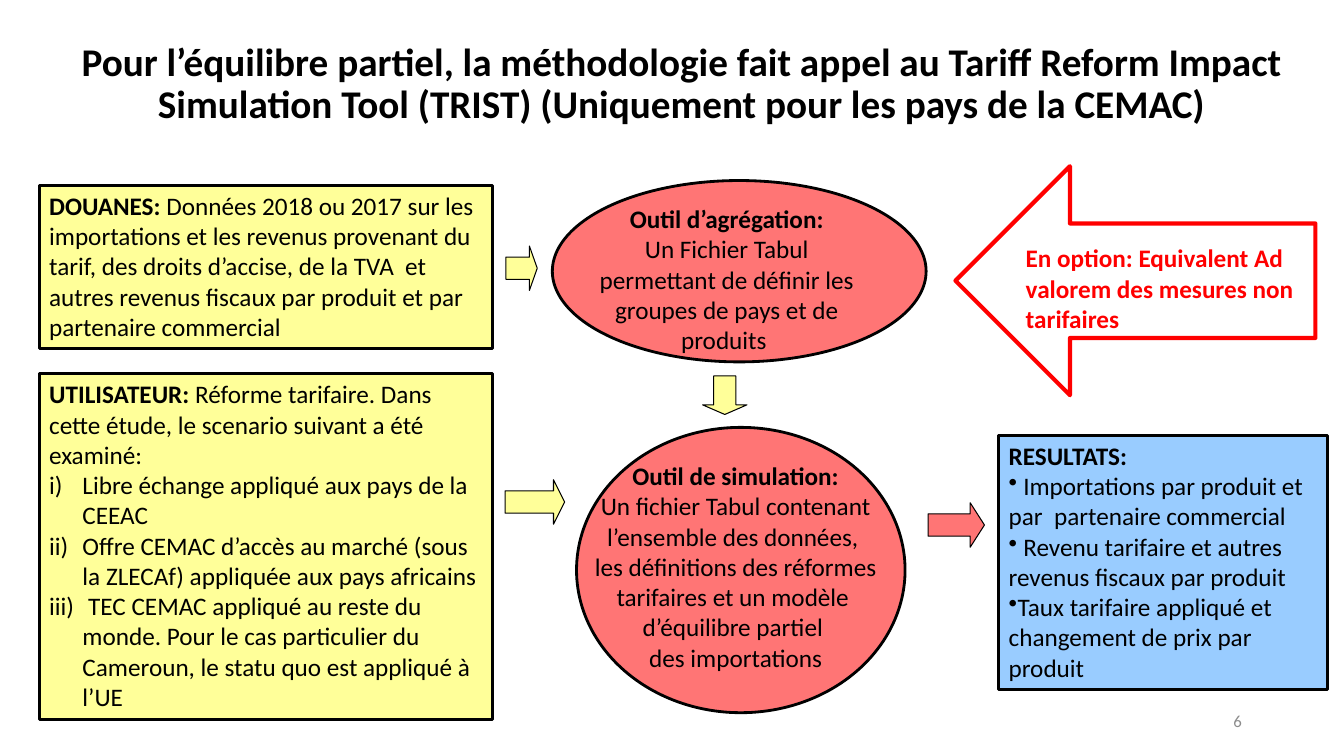
from dataclasses import dataclass

from lxml import etree
from pptx import Presentation
from pptx.dml.color import RGBColor
from pptx.enum.shapes import MSO_SHAPE
from pptx.enum.text import MSO_ANCHOR, PP_ALIGN
from pptx.oxml.ns import qn
from pptx.util import Cm, Pt

RECT, OVAL = MSO_SHAPE.RECTANGLE, MSO_SHAPE.OVAL
RIGHT_ARROW, LEFT_ARROW = MSO_SHAPE.RIGHT_ARROW, MSO_SHAPE.LEFT_ARROW
LEFT, CENTER, RIGHT = PP_ALIGN.LEFT, PP_ALIGN.CENTER, PP_ALIGN.RIGHT
TOP, MIDDLE = MSO_ANCHOR.TOP, MSO_ANCHOR.MIDDLE


@dataclass(frozen=True)
class Theme:
    font: str = "Calibri"
    title: int = 28
    body: int = 18
    small: int = 12
    black: str = "000000"
    red: str = "FF0000"
    grey: str = "8C8C8C"
    tool: str = "FF7575"
    source: str = "FFFF99"
    result: str = "99CCFF"


THEME = Theme()
ROMAN = ("a:buAutoNum", "type", "romanLcParenR", Cm(0.84))
DOT = ("a:buChar", "char", "•", 0)

prs = Presentation()
prs.slide_width, prs.slide_height = Cm(33.87), Cm(19.05)
slide = prs.slides.add_slide(prs.slide_layouts[6])


def add_block(box, kind, fill=None, line=THEME.black, weight=2.0):
    """Add a preset shape; box is left, top, width, height in centimetres."""
    block = slide.shapes.add_shape(kind, *map(Cm, box))
    block.shadow.inherit = False
    if fill:
        block.fill.solid()
        block.fill.fore_color.rgb = RGBColor.from_string(fill)
    else:
        block.fill.background()
    block.line.color.rgb = RGBColor.from_string(line)
    block.line.width = Pt(weight)
    return block


def write(holder, paragraphs, size=THEME.body, color=THEME.black, align=LEFT,
          anchor=TOP, spacing=1.0, bullet=None):
    """Write (bold, plain) pairs as paragraphs; bullet marks all but the first.

    The holder is a shape, or a box in centimetres for a new text box.
    """
    if isinstance(holder, tuple):
        holder = slide.shapes.add_textbox(*map(Cm, holder))
    frame = holder.text_frame
    frame.word_wrap = True
    frame.vertical_anchor = anchor
    for index, parts in enumerate(paragraphs):
        paragraph = frame.add_paragraph() if index else frame.paragraphs[0]
        paragraph.alignment = align
        paragraph.line_spacing = spacing
        if bullet and index:
            tag, attribute, value, indent = bullet
            properties = paragraph._p.get_or_add_pPr()
            properties.set("marL", str(indent))
            properties.set("indent", str(-indent))
            etree.SubElement(properties, qn(tag)).set(attribute, value)
        for text, bold in zip(parts, (True, False)):
            if text:
                run = paragraph.add_run()
                run.text = text
                run.font.name = THEME.font
                run.font.size = Pt(size)
                run.font.bold = bold
                run.font.color.rgb = RGBColor.from_string(color)


write((0.48, 0.46, 33.38, 3.35),
      [("Pour l’équilibre partiel, la méthodologie fait appel au Tariff Reform Impact "
        "Simulation Tool (TRIST) (Uniquement pour les pays de la CEMAC)", "")],
      size=THEME.title, align=CENTER, anchor=MIDDLE, spacing=0.9)

# Data sources and results
customs = add_block((0.99, 4.67, 11.43, 4.11), RECT, THEME.source)
write(customs, [
    ("DOUANES:", " Données 2018 ou 2017 sur les importations et les revenus provenant "
     "du tarif, des droits d’accise, de la TVA  et autres revenus fiscaux par produit "
     "et par partenaire commercial")])

user = add_block((0.99, 9.42, 11.43, 8.71), RECT, THEME.source)
write(user, [
    ("UTILISATEUR:", " Réforme tarifaire. Dans cette étude, le scenario suivant a été "
     "examiné:"),
    ("", "Libre échange appliqué aux pays de la CEEAC"),
    ("", "Offre CEMAC d’accès au marché (sous la ZLECAf) appliquée aux pays africains"),
    ("", " TEC CEMAC appliqué au reste du monde. Pour le cas particulier du Cameroun, "
     "le statu quo est appliqué à l’UE")], bullet=ROMAN)

results = add_block((25.17, 10.97, 8.28, 6.4), RECT, THEME.result)
write(results, [
    ("RESULTATS:", ""),
    ("", " Importations par produit et par  partenaire commercial"),
    ("", " Revenu tarifaire et autres revenus fiscaux par produit"),
    ("", "Taux tarifaire appliqué et changement de prix par produit")], bullet=DOT)

# Tools
add_block((13.92, 4.55, 9.42, 4.57), OVAL, THEME.tool)
write((14.81, 5, 7.01, 4.11), [
    ("Outil d’agrégation:", ""),
    ("", "Un Fichier Tabul permettant de définir les groupes de pays et de produits ")],
    align=CENTER)

add_block((14.53, 10.77, 8.28, 7.19), OVAL, THEME.tool)
write((14.02, 11.48, 9.04, 5.64), [
    ("Outil de simulation:", ""),
    ("", "Un fichier Tabul contenant"),
    ("", "l’ensemble des données, "),
    ("", "les définitions des réformes"),
    ("", "tarifaires et un modèle "),
    ("", "d’équilibre partiel "),
    ("", "des importations")], align=CENTER)

# Flow arrows: left, top, width, head length, fill, rotation
ARROW_HEIGHT = 1.12
for left, top, width, head, fill, rotation in [
    (12.75, 6.2, 0.79, 0.25, THEME.source, 0),
    (12.73, 12.09, 1.5, 0.25, THEME.source, 0),
    (17.78, 9.4, 0.97, 0.25, THEME.source, 90),
    (23.39, 12.67, 1.42, 0.32, THEME.tool, 0),
]:
    flow = add_block((left, top, width, ARROW_HEIGHT), RIGHT_ARROW, fill, weight=0.75)
    flow.adjustments[1] = head
    flow.rotation = rotation

# Optional input
add_block((24.08, 4.19, 9.07, 5.77), LEFT_ARROW, line=THEME.red, weight=3)
write((25.6, 5.99, 7.57, 2.57),
      [("En option: Equivalent Ad valorem des mesures non tarifaires", "")],
      color=THEME.red)

write((23.93, 17.65, 7.62, 1.02), [("", "6")], size=THEME.small, color=THEME.grey,
      align=RIGHT, anchor=MIDDLE)

prs.save("out.pptx")
